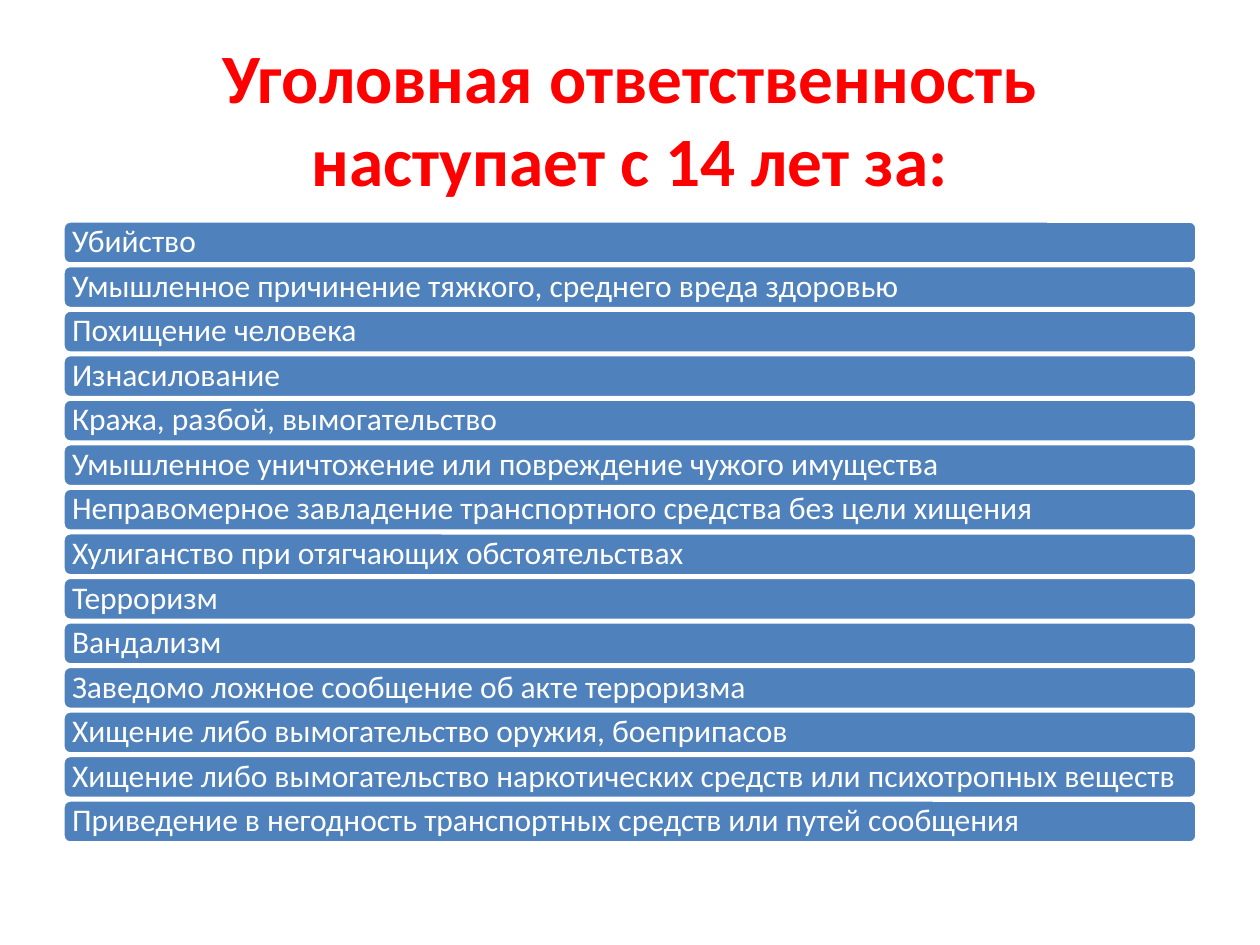
import pptx
import pptx.util
import pptx.dml.color
import pptx.enum.shapes
import pptx.enum.text

# Content
TITLE = "Уголовная ответственность наступает с 14 лет за:"
CRIMES = [
    "Убийство",
    "Умышленное причинение тяжкого, среднего вреда здоровью",
    "Похищение человека",
    "Изнасилование",
    "Кража, разбой, вымогательство",
    "Умышленное уничтожение или повреждение чужого имущества",
    "Неправомерное завладение транспортного средства без цели хищения",
    "Хулиганство при отягчающих обстоятельствах",
    "Терроризм",
    "Вандализм",
    "Заведомо ложное сообщение об акте терроризма",
    "Хищение либо вымогательство оружия, боеприпасов",
    "Хищение либо вымогательство наркотических средств или психотропных веществ",
    "Приведение в негодность транспортных средств или путей сообщения",
]
COLORS = {"title": "FF0000", "bar": "4F81BD", "white": "FFFFFF"}
FONT = "Calibri"

# Layout in px, 126 to the inch
SCALE = 914400 / 126
LEFT, WIDE = 63, 1134
FIRST, LAST, HIGH = 221, 800, 43
PITCH = (LAST - FIRST) / (len(CRIMES) - 1)
INSET = 7


def emu(px):
    return pptx.util.Emu(round(px * SCALE))


def color(name):
    return pptx.dml.color.RGBColor.from_string(COLORS[name])


def write(frame, text, size, tint, align, bold=False):
    frame.word_wrap = True
    frame.auto_size = pptx.enum.text.MSO_AUTO_SIZE.NONE
    frame.vertical_anchor = pptx.enum.text.MSO_ANCHOR.MIDDLE
    para = frame.paragraphs[0]
    para.alignment = align
    run = para.add_run()
    run.text = text
    run.font.name = FONT
    run.font.size = pptx.util.Pt(size)
    run.font.bold = bold
    run.font.color.rgb = color(tint)
    return para


def add_bar(slide, text, top):
    bar = slide.shapes.add_shape(
        pptx.enum.shapes.MSO_SHAPE.ROUNDED_RECTANGLE,
        emu(LEFT), emu(top), emu(WIDE), emu(HIGH))
    bar.shadow.inherit = False
    bar.fill.solid()
    bar.fill.fore_color.rgb = color("bar")
    bar.line.color.rgb = color("white")
    bar.line.width = pptx.util.Pt(2)
    frame = bar.text_frame
    frame.margin_left = frame.margin_right = emu(INSET)
    frame.margin_top = frame.margin_bottom = 0
    para = write(frame, text, 18, "white", pptx.enum.text.PP_ALIGN.LEFT)
    para.line_spacing = 0.9


def main():
    deck = pptx.Presentation()
    deck.slide_width, deck.slide_height = emu(1260), emu(945)
    slide = deck.slides.add_slide(deck.slide_layouts[5])

    # Title
    title = slide.shapes.title
    title.left, title.top = emu(LEFT), emu(38)
    title.width, title.height = emu(WIDE), emu(158)
    write(title.text_frame, TITLE, 39.6, "title",
          pptx.enum.text.PP_ALIGN.CENTER, bold=True)

    # Stack of bars
    for row, crime in enumerate(CRIMES):
        add_bar(slide, crime, FIRST + row * PITCH)

    deck.save("out.pptx")


if __name__ == "__main__":
    main()
